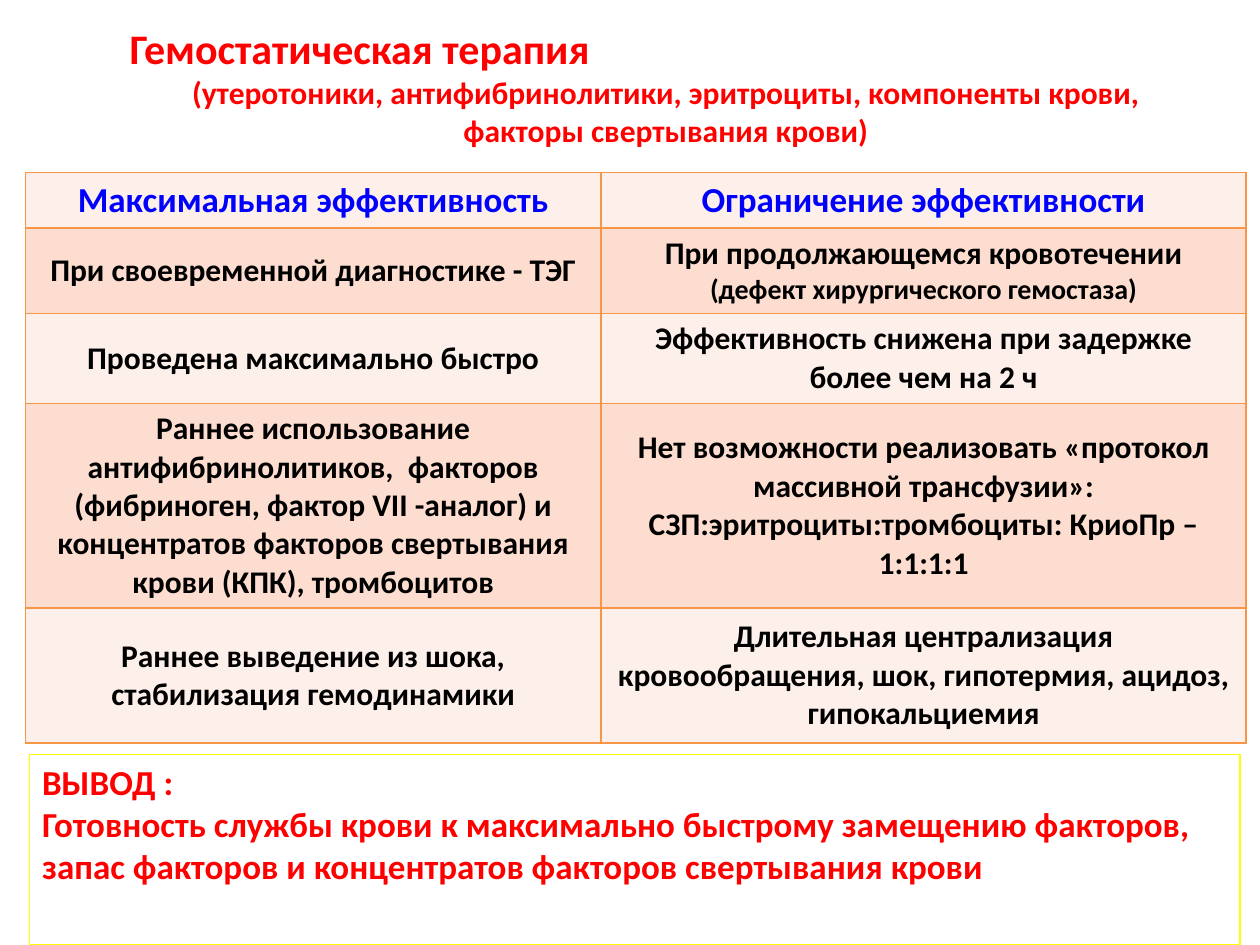
from lxml.etree import SubElement
from pptx import Presentation
from pptx.dml.color import RGBColor
from pptx.enum.shapes import MSO_SHAPE as Shape
from pptx.enum.text import MSO_ANCHOR as Anchor, MSO_AUTO_SIZE as AutoSize, PP_ALIGN as Align
from pptx.oxml.ns import qn
from pptx.util import Cm, Pt

RED = RGBColor(0xFF, 0x00, 0x00)
BLUE = RGBColor(0x00, 0x00, 0xFF)
BLACK = RGBColor(0x00, 0x00, 0x00)
YELLOW = RGBColor(0xFF, 0xFF, 0x00)
ORANGE = RGBColor(0xF7, 0x96, 0x46)
BANDS = [RGBColor(0xFD, 0xEF, 0xE9), RGBColor(0xFC, 0xDD, 0xCF)]

TITLE = "Гемостатическая терапия"
SUBTITLE = "(утеротоники, антифибринолитики, эритроциты, компоненты крови, факторы свертывания крови)"
HEADINGS = ["Максимальная эффективность", "Ограничение эффективности"]
ROWS = [
    ["При своевременной диагностике - ТЭГ",
     ("При продолжающемся кровотечении", "(дефект хирургического гемостаза)")],
    ["Проведена максимально быстро",
     "Эффективность снижена при задержке более чем на 2 ч"],
    ["Раннее использование антифибринолитиков,  факторов (фибриноген, фактор VII -аналог) "
     "и концентратов факторов свертывания крови (КПК), тромбоцитов",
     "Нет возможности реализовать «протокол массивной трансфузии»: "
     "СЗП:эритроциты:тромбоциты: КриоПр – 1:1:1:1"],
    ["Раннее выведение из шока, стабилизация гемодинамики",
     "Длительная централизация кровообращения, шок, гипотермия, ацидоз, гипокальциемия"],
]
CONCLUSION = [
    "ВЫВОД :",
    "Готовность службы крови к максимально быстрому замещению факторов, "
    "запас факторов и концентратов факторов свертывания крови",
]
COLUMN_WIDTHS = [11.61, 13]
ROW_HEIGHTS = [1.11, 1.71, 1.81, 4.13, 2.72]


def write(frame, text, first=False, size=18, color=BLACK, align=Align.CENTER, indent=0):
    para = frame.paragraphs[0] if first else frame.add_paragraph()
    para.alignment = align
    para.space_before = Pt(0)
    if indent:
        para._p.get_or_add_pPr().set("marL", str(Cm(indent)))
    span = para.add_run()
    span.text = text
    span.font.name = "Calibri"
    span.font.size = Pt(size)
    span.font.bold = True
    span.font.color.rgb = color


def add_borders(cell):
    properties = cell._tc.get_or_add_tcPr()
    for index, side in enumerate(["lnL", "lnR", "lnT", "lnB"]):
        border = SubElement(properties, qn(f"a:{side}"), w=str(Pt(1)))
        fill = SubElement(border, qn("a:solidFill"))
        SubElement(fill, qn("a:srgbClr"), val=str(ORANGE))
        properties.insert(index, border)


def add_title(page):
    box = page.shapes.title
    box.left, box.top, box.width, box.height = Cm(1.09), Cm(0.33), Cm(23.4), Cm(2.82)
    frame = box.text_frame
    frame.auto_size = AutoSize.NONE
    frame.vertical_anchor = Anchor.TOP
    write(frame, TITLE, first=True, size=24, color=RED, align=Align.LEFT, indent=1.27)
    write(frame, SUBTITLE, color=RED)


def add_effect_table(page):
    grid = [HEADINGS] + ROWS
    table = page.shapes.add_table(
        len(grid), len(HEADINGS), Cm(0.51), Cm(3.48),
        Cm(sum(COLUMN_WIDTHS)), Cm(sum(ROW_HEIGHTS))).table
    for column, width in zip(table.columns, COLUMN_WIDTHS):
        column.width = Cm(width)
    for r, (texts, height) in enumerate(zip(grid, ROW_HEIGHTS)):
        table.rows[r].height = Cm(height)
        for c, text in enumerate(texts):
            cell = table.cell(r, c)
            cell.fill.solid()
            cell.fill.fore_color.rgb = BANDS[r % 2]
            add_borders(cell)
            cell.vertical_anchor = Anchor.MIDDLE if r else Anchor.TOP
            main, *notes = text if isinstance(text, tuple) else (text,)
            write(cell.text_frame, main, first=True,
                  size=18 if r else 20, color=BLACK if r else BLUE)
            for note in notes:
                write(cell.text_frame, note, size=16)


def add_conclusion(page):
    box = page.shapes.add_shape(Shape.RECTANGLE, Cm(0.6), Cm(15.21), Cm(24.4), Cm(3.84))
    box.shadow.inherit = False
    box.fill.background()
    box.line.color.rgb = YELLOW
    box.line.width = Pt(0.75)
    frame = box.text_frame
    frame.word_wrap = True
    frame.vertical_anchor = Anchor.TOP
    for index, text in enumerate(CONCLUSION):
        write(frame, text, first=index == 0, size=20, color=RED, align=Align.LEFT)


def main():
    deck = Presentation()
    deck.slide_width, deck.slide_height = Cm(25.4), Cm(19.05)
    page = deck.slides.add_slide(deck.slide_layouts[5])
    add_title(page)
    add_effect_table(page)
    add_conclusion(page)
    deck.save("out.pptx")


if __name__ == "__main__":
    main()
